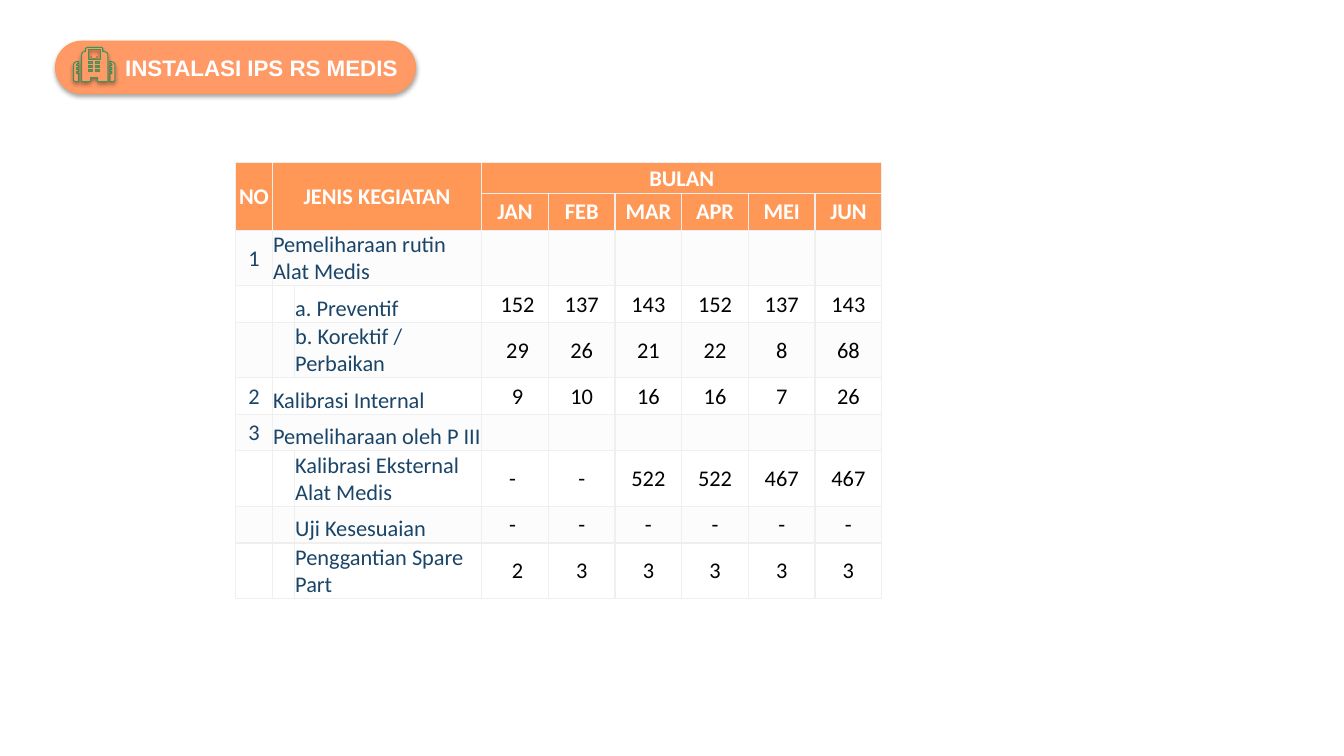
"""Build the slide of medical equipment upkeep by month."""
import dataclasses

import lxml.etree
import pptx
import pptx.dml.color
import pptx.enum.shapes
import pptx.enum.text
import pptx.oxml
import pptx.oxml.ns
import pptx.util

Cm = pptx.util.Cm
Pt = pptx.util.Pt
Align = pptx.enum.text.PP_ALIGN
Anchor = pptx.enum.text.MSO_ANCHOR
rgb = pptx.dml.color.RGBColor.from_string
qn = pptx.oxml.ns.qn


@dataclasses.dataclass
class Theme:
    pill: str = "FF9966"
    head: str = "FF9856"
    leaf: str = "32995B"
    navy: str = "1A4568"
    ink: str = "010303"
    black: str = "000000"
    white: str = "FFFFFF"
    band: str = "FCFCFC"
    grid: str = "EFEFEF"
    size: int = 16
    title: str = "Arial"
    body: str = "Calibri"


theme = Theme()


def paint(shape, line):
    shape.fill.solid()
    shape.fill.fore_color.rgb = rgb(theme.pill)
    shape.line.color.rgb = rgb(line)
    shape.line.width = Pt(0.75)
    shape.shadow.inherit = False
    glow = shape._element.spPr.find(qn("a:effectLst"))
    drop = lxml.etree.SubElement(glow, qn("a:outerShdw"), blurRad=str(Pt(3.1)),
                                 dist=str(Pt(1.8)), dir="5400000", rotWithShape="0")
    tint = lxml.etree.SubElement(drop, qn("a:srgbClr"), val=theme.black)
    lxml.etree.SubElement(tint, qn("a:alpha"), val="35000")


def write(frame, text, align, face, color, bold):
    para = frame.paragraphs[0]
    para.alignment = align
    run = para.add_run()
    run.text = text
    run.font.name = face
    run.font.size = Pt(theme.size)
    run.font.bold = bold
    run.font.color.rgb = rgb(color)


deck = pptx.Presentation()
deck.slide_width = Cm(33.87)
deck.slide_height = Cm(19.05)
slide = deck.slides.add_slide(deck.slide_layouts[6])

badge = slide.shapes.add_group_shape()
pill = badge.shapes.add_shape(pptx.enum.shapes.MSO_SHAPE.ROUNDED_RECTANGLE,
                              Cm(1.4), Cm(1.04), Cm(9.07), Cm(1.32))
pill.adjustments[0] = 0.5
paint(pill, theme.head)
pill.text_frame.vertical_anchor = Anchor.MIDDLE
write(pill.text_frame, "INSTALASI IPS RS MEDIS", Align.RIGHT,
      theme.title, theme.white, True)

cross = [(92, 51), (95, 51), (95, 53), (97, 53), (97, 55), (95, 55),
         (95, 57), (92, 57), (92, 55), (90, 55), (90, 53), (92, 53)]
wing = [(78, 61), (77, 61), (74, 62), (73, 64), (73, 80), (75, 81), (78, 81),
        (78, 73), (76, 73), (76, 71), (78, 71), (78, 69), (76, 69), (76, 67),
        (78, 67), (78, 65), (76, 65), (76, 64), (77, 63), (78, 63)]
twin = [(187 - x, y) for x, y in wing]
tower = [(87, 47), (85, 48), (85, 51), (84, 51), (82, 52), (81, 54), (81, 81),
         (90, 81), (90, 77), (97, 77), (97, 81), (107, 81), (107, 54),
         (106, 52), (103, 51), (102, 51), (102, 48), (101, 47)]
holes = [[(88, 49), (100, 49), (100, 59), (88, 59)]]
for y in (61, 65, 69):
    for x in (88, 95):
        holes.append([(x, y), (x + 4, y), (x + 4, y + 2), (x, y + 2)])

for rings, line in (([cross], theme.head), ([wing], theme.leaf),
                    ([twin], theme.leaf), ([tower] + holes, theme.leaf)):
    pen = badge.shapes.build_freeform(*rings[0][0], scale=Cm(2.54) / 100)
    pen.add_line_segments(rings[0][1:])
    for ring in rings[1:]:
        pen.move_to(*ring[0])
        pen.add_line_segments(ring[1:])
    paint(pen.convert_to_shape(), line)

months = ["JAN", "FEB", "MAR", "APR", "MEI", "JUN"]
tasks = [
    ("1", "Pemeliharaan rutin Alat Medis", []),
    ("", "a. Preventif", [152, 137, 143, 152, 137, 143]),
    ("", "b. Korektif / Perbaikan", [29, 26, 21, 22, 8, 68]),
    ("2", "Kalibrasi Internal", [9, 10, 16, 16, 7, 26]),
    ("3", "Pemeliharaan oleh P III", []),
    ("", "Kalibrasi Eksternal Alat Medis", ["-", "-", 522, 522, 467, 467]),
    ("", "Uji Kesesuaian", ["-"] * 6),
    ("", "Penggantian Spare Part", [2, 3, 3, 3, 3, 3]),
]
widths = [0.92, 0.56, 4.72] + [1.68] * len(months)
heights = [0.78] + [0.92] * (len(tasks) + 1)
grid = slide.shapes.add_table(len(heights), len(widths), Cm(5.94), Cm(4.1),
                              Cm(sum(widths)), Cm(sum(heights))).table
grid.first_row = False
grid.horz_banding = False
for col, width in zip(grid.columns, widths):
    col.width = Cm(width)
for row, height in zip(grid.rows, heights):
    row.height = Cm(height)

for r, row in enumerate(grid.rows):
    for cell in row.cells:
        cell.margin_left = cell.margin_right = cell.margin_top = Cm(0.02)
        cell.margin_bottom = 0
        cell.vertical_anchor = Anchor.MIDDLE
        for side in ("a:lnL", "a:lnR", "a:lnT", "a:lnB"):
            edge = lxml.etree.SubElement(cell._tc.tcPr, qn(side), w=str(Pt(1)))
            fill = lxml.etree.SubElement(edge, qn("a:solidFill"))
            lxml.etree.SubElement(fill, qn("a:srgbClr"), val=theme.grid)
        cell.fill.solid()
        shade = theme.head if r < 2 else (theme.band, theme.white)[r % 2]
        cell.fill.fore_color.rgb = rgb(shade)

grid.cell(0, 0).merge(grid.cell(1, 0))
grid.cell(0, 1).merge(grid.cell(1, 2))
grid.cell(0, 3).merge(grid.cell(0, 8))
heads = [(0, 0, "NO"), (0, 1, "JENIS KEGIATAN"), (0, 3, "BULAN")]
heads += [(1, c, month) for c, month in enumerate(months, 3)]
for r, c, text in heads:
    write(grid.cell(r, c).text_frame, text, Align.CENTER,
          theme.body, theme.white, True)

gap = chr(160)
for r, (mark, task, counts) in enumerate(tasks, 2):
    name = grid.cell(r, 1 if mark else 2)
    if mark:
        name.merge(grid.cell(r, 2))
        write(grid.cell(r, 0).text_frame, mark, Align.CENTER,
              theme.body, theme.navy, False)
    name.vertical_anchor = Anchor.BOTTOM
    write(name.text_frame, task, Align.LEFT, theme.body, theme.navy, False)
    for c, count in enumerate(counts, 3):
        text = str(count)
        if c == 3:
            text = text + gap if text == "-" else gap + text
        write(grid.cell(r, c).text_frame, text, Align.CENTER, theme.body,
              theme.ink if c < 5 else theme.black, False)

deck.save("out.pptx")
